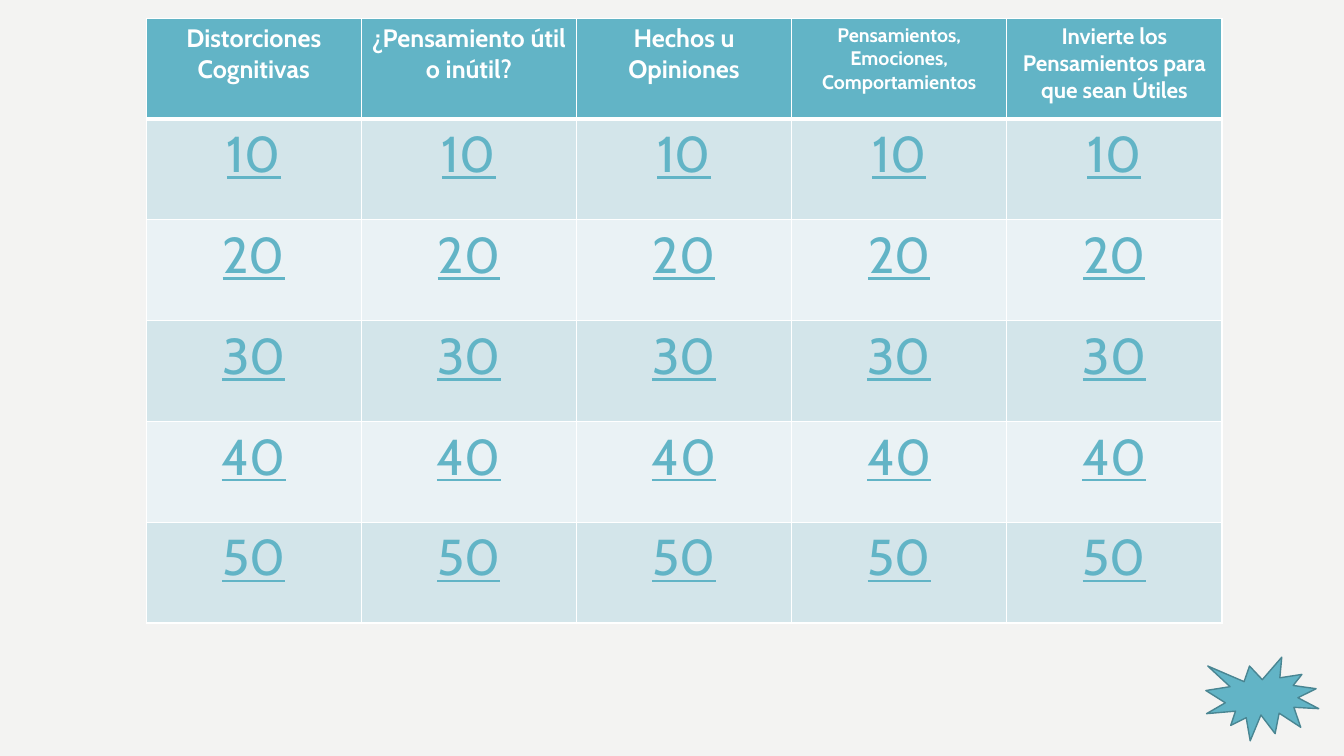
import pptx
import pptx.dml.color
import pptx.enum.shapes
import pptx.enum.text
import pptx.oxml
import pptx.oxml.ns
import pptx.util

Inches = pptx.util.Inches
Pt = pptx.util.Pt

COLORS = {
    "background": "F3F3F2",
    "teal": "62B4C6",
    "outline": "498592",
    "band_dark": "D3E5EA",
    "band_light": "EAF2F5",
    "white": "FFFFFF",
}
CATEGORIES = [
    ("Distorciones Cognitivas", 18),
    ("¿Pensamiento útil o inútil?", 18),
    ("Hechos u Opiniones", 18),
    ("Pensamientos, Emociones, Comportamientos", 14),
    ("Invierte los Pensamientos para que sean Útiles", 16),
]
POINTS = [10, 20, 30, 40, 50]


def rgb(name):
    return pptx.dml.color.RGBColor.from_string(COLORS[name])


def style_cell(cell, text, size, fill, color, header, top, bottom):
    for side, width in (("L", 1), ("R", 1), ("T", top), ("B", bottom)):
        border = pptx.oxml.parse_xml(
            f'<a:ln{side} {pptx.oxml.ns.nsdecls("a")} w="{Pt(width)}"><a:solidFill>'
            f'<a:srgbClr val="{COLORS["white"]}"/></a:solidFill></a:ln{side}>'
        )
        cell._tc.get_or_add_tcPr().append(border)
    cell.fill.solid()
    cell.fill.fore_color.rgb = rgb(fill)
    cell.text = text
    paragraph = cell.text_frame.paragraphs[0]
    paragraph.alignment = pptx.enum.text.PP_ALIGN.CENTER
    font = paragraph.font
    font.name = "Cabin"
    font.size = Pt(size)
    font.bold = header
    font.underline = not header
    font.color.rgb = rgb(color)


presentation = pptx.Presentation()
presentation.slide_width = Inches(13.33)
presentation.slide_height = Inches(7.5)
slide = presentation.slides.add_slide(presentation.slide_layouts[6])
slide.background.fill.solid()
slide.background.fill.fore_color.rgb = rgb("background")

board = slide.shapes.add_table(
    len(POINTS) + 1, len(CATEGORIES), Inches(1.45), Inches(0.18), Inches(10.67), Inches(6)
).table
for column, (category, size) in enumerate(CATEGORIES):
    style_cell(board.cell(0, column), category, size, "teal", "white", True, 1, 3)
    for row, points in enumerate(POINTS, start=1):
        band = "band_dark" if row % 2 else "band_light"
        top = 3 if row == 1 else 1
        style_cell(board.cell(row, column), str(points), 36, band, "teal", False, top, 1)

burst = slide.shapes.add_shape(
    pptx.enum.shapes.MSO_SHAPE.EXPLOSION1, Inches(11.96), Inches(6.52), Inches(1.12), Inches(0.83)
)
burst.shadow.inherit = False
burst.fill.solid()
burst.fill.fore_color.rgb = rgb("teal")
burst.line.color.rgb = rgb("outline")
burst.line.width = Pt(1)

presentation.save("out.pptx")
